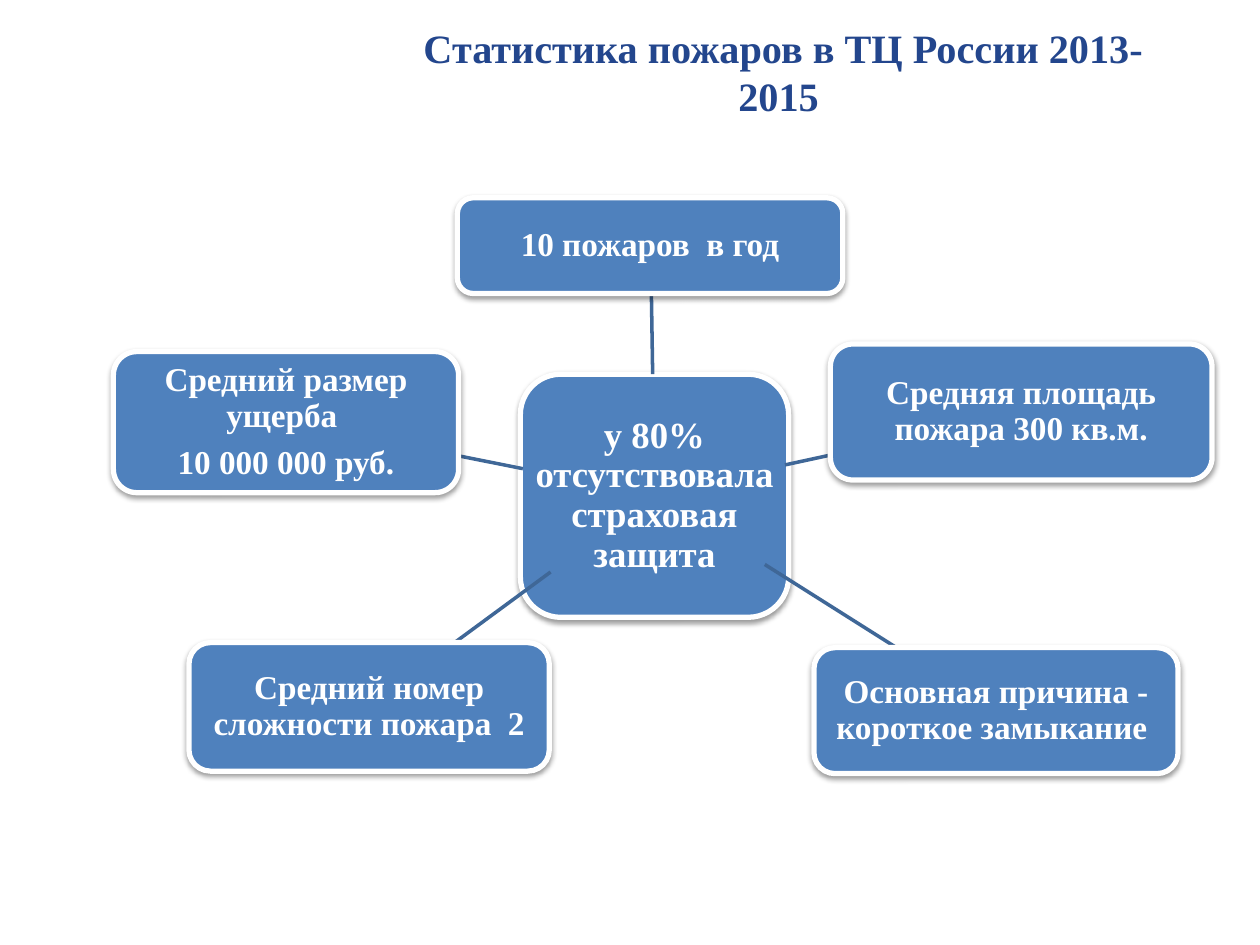
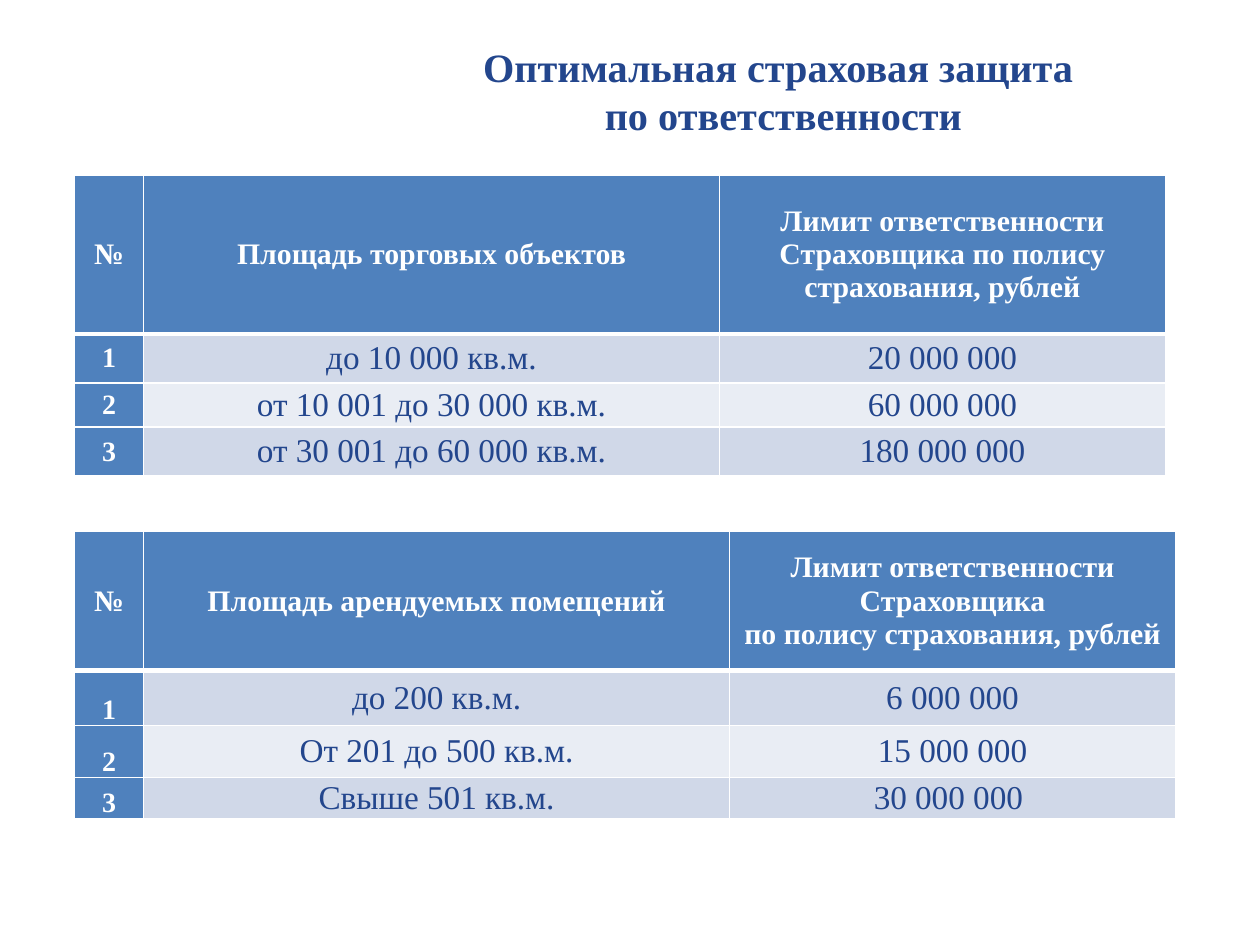
from lxml.etree import SubElement
from pptx import Presentation
from pptx.dml.color import RGBColor
from pptx.enum.shapes import MSO_CONNECTOR as Connector, MSO_SHAPE as Shape
from pptx.enum.text import MSO_ANCHOR as Anchor, PP_ALIGN as Align
from pptx.oxml import parse_xml
from pptx.oxml.ns import nsdecls, qn
from pptx.util import Inches, Pt

COLORS = {
    "title": "23468D",
    "blue": "4F81BD",
    "spoke": "3F6797",
    "white": "FFFFFF",
    "odd_row": "D0D8E8",
    "even_row": "E9EDF4",
    "shadow": "000000",
}
FONT = "Times New Roman"

FIRE_TITLE = ["Статистика пожаров в ТЦ России 2013-2015 "]
HUB = (["у 80% отсутствовала страховая защита"], (4.13, 2.97, 2.13, 1.93))
# text, box (left, top, width, height), spoke (from x, y, to x, y)
FACTS = [
    (["10 пожаров  в год"],
     (3.63, 1.57, 3.06, 0.76), (5.18, 2.97, 5.17, 2.33)),
    (["Средний размер ущерба ", "10 000 000 руб."],
     (0.9, 2.79, 2.74, 1.12), (4.15, 3.72, 3.5, 3.59)),
    (["Основная причина - короткое замыкание "],
     (6.46, 5.14, 2.89, 1), (6.07, 4.48, 7.21, 5.2)),
    (["Средний номер сложности пожара  2"],
     (1.5, 5.1, 2.86, 1.02), (4.37, 4.54, 3.54, 5.15)),
    (["Средняя площадь пожара 300 кв.м."],
     (6.59, 2.73, 3.03, 1.08), (6.23, 3.69, 6.83, 3.56)),
]

COVER_TITLE = ["Оптимальная страховая защита \vпо ответственности"]
LIMIT_TABLES = [
    {
        "top": 1.39,
        "columns": [0.55, 4.57, 3.54],
        "heights": [1.26, 0.39, 0.35, 0.39],
        "number_anchor": Anchor.MIDDLE,
        "header": [["№"], ["Площадь торговых объектов"],
                   ["Лимит ответственности Страховщика по полису страхования, рублей"]],
        "limits": [("до 10 000 кв.м.", "20 000 000"),
                   ("от 10 001 до 30 000 кв.м.", "60 000 000"),
                   ("от 30 001 до 60 000 кв.м.", "180 000 000")],
    },
    {
        "top": 4.22,
        "columns": [0.55, 4.65, 3.54],
        "heights": [1.1, 0.44, 0.41, 0.33],
        "number_anchor": Anchor.BOTTOM,
        "header": [["№"], ["Площадь арендуемых помещений"],
                   ["Лимит ответственности Страховщика", "по полису страхования, рублей"]],
        "limits": [("до 200 кв.м.", "6 000 000"),
                   ("От 201 до 500 кв.м.", "15 000 000"),
                   ("Свыше 501 кв.м.", "30 000 000 ")],
    },
]
TABLE_LEFT = 0.59


def rgb(name):
    return RGBColor.from_string(COLORS[name])


def write(frame, paragraphs, *, size, color="white", bold=True, spacing=None, after=0):
    frame.word_wrap = True
    for index, words in enumerate(paragraphs):
        paragraph = frame.paragraphs[0] if index == 0 else frame.add_paragraph()
        paragraph.text = words
        paragraph.alignment = Align.CENTER
        paragraph.space_after = Pt(after)
        if spacing:
            paragraph.line_spacing = spacing
        font = paragraph.font
        font.name, font.size, font.bold = FONT, Pt(size), bold
        font.color.rgb = rgb(color)


def add_title(slide, paragraphs, top):
    frame = slide.shapes.add_textbox(
        Inches(2.95), Inches(top), Inches(6.54), Inches(0.71)).text_frame
    frame.vertical_anchor = Anchor.MIDDLE
    write(frame, paragraphs, size=23, color="title")


def add_card(slide, paragraphs, box, size):
    card = slide.shapes.add_shape(Shape.ROUNDED_RECTANGLE, *map(Inches, box))
    card.fill.solid()
    card.fill.fore_color.rgb = rgb("blue")
    card.line.color.rgb = rgb("white")
    card.line.width = Pt(3)
    card.shadow.inherit = False
    effects = card.fill._xPr.find(qn("a:effectLst"))
    effects.append(parse_xml(
        f'<a:outerShdw {nsdecls("a")} blurRad="{Pt(3.1)}" dist="{Pt(1.6)}" '
        f'dir="5400000" rotWithShape="0"><a:srgbClr val="{COLORS["shadow"]}">'
        '<a:alpha val="38000"/></a:srgbClr></a:outerShdw>'))
    frame = card.text_frame
    frame.vertical_anchor = Anchor.MIDDLE
    frame.margin_left = frame.margin_right = Inches(0.01)
    frame.margin_top = frame.margin_bottom = Inches(0.01)
    write(frame, paragraphs, size=size, spacing=0.9, after=round(size * 0.35, 1))


def add_spoke(slide, ends):
    spoke = slide.shapes.add_connector(Connector.STRAIGHT, *map(Inches, ends))
    spoke.line.color.rgb = rgb("spoke")
    spoke.line.width = Pt(2)
    SubElement(spoke._element.spPr, qn("a:effectLst"))


def set_borders(cell, bottom):
    """Rule the cell in white; borders must precede the fill."""
    properties = cell._tc.get_or_add_tcPr()
    for side, width in (("L", 1), ("R", 1), ("T", 1), ("B", bottom)):
        border = SubElement(properties, qn(f"a:ln{side}"), w=str(Pt(width)))
        fill = SubElement(border, qn("a:solidFill"))
        SubElement(fill, qn("a:srgbClr"), val=COLORS["white"])


def fill_cell(cell, paragraphs, fill, anchor=Anchor.MIDDLE, bottom=1, **text_format):
    cell.vertical_anchor = anchor
    cell.margin_left = cell.margin_right = Inches(0.07)
    cell.margin_top = cell.margin_bottom = 0
    set_borders(cell, bottom)
    cell.fill.solid()
    cell.fill.fore_color.rgb = rgb(fill)
    write(cell.text_frame, paragraphs, **text_format)


def add_limit_table(slide, spec_data):
    columns, heights = spec_data["columns"], spec_data["heights"]
    table = slide.shapes.add_table(
        len(heights), len(columns), Inches(TABLE_LEFT), Inches(spec_data["top"]),
        Inches(sum(columns)), Inches(sum(heights))).table
    for column, width in zip(table.columns, columns):
        column.width = Inches(width)
    for row, height in zip(table.rows, heights):
        row.height = Inches(height)

    for column, heading in enumerate(spec_data["header"]):
        fill_cell(table.cell(0, column), heading, "blue", bottom=3, size=17)
    for number, limits in enumerate(spec_data["limits"], 1):
        fill_cell(table.cell(number, 0), [str(number)], "blue",
                  anchor=spec_data["number_anchor"], size=16)
        band = "odd_row" if number % 2 else "even_row"
        for column, words in enumerate(limits, 1):
            fill_cell(table.cell(number, column), [words], band,
                      size=19, color="title", bold=False)


def main():
    deck = Presentation()
    deck.slide_width, deck.slide_height = Inches(10), Inches(7.5)
    blank = deck.slide_layouts[6]

    fires = deck.slides.add_slide(blank)
    add_title(fires, FIRE_TITLE, top=0.21)
    add_card(fires, *HUB, size=21)
    for paragraphs, box, ends in FACTS:
        add_spoke(fires, ends)
        add_card(fires, paragraphs, box, size=19)

    cover = deck.slides.add_slide(blank)
    add_title(cover, COVER_TITLE, top=0.36)
    for limit_table in LIMIT_TABLES:
        add_limit_table(cover, limit_table)

    deck.save("out.pptx")


if __name__ == "__main__":
    main()
